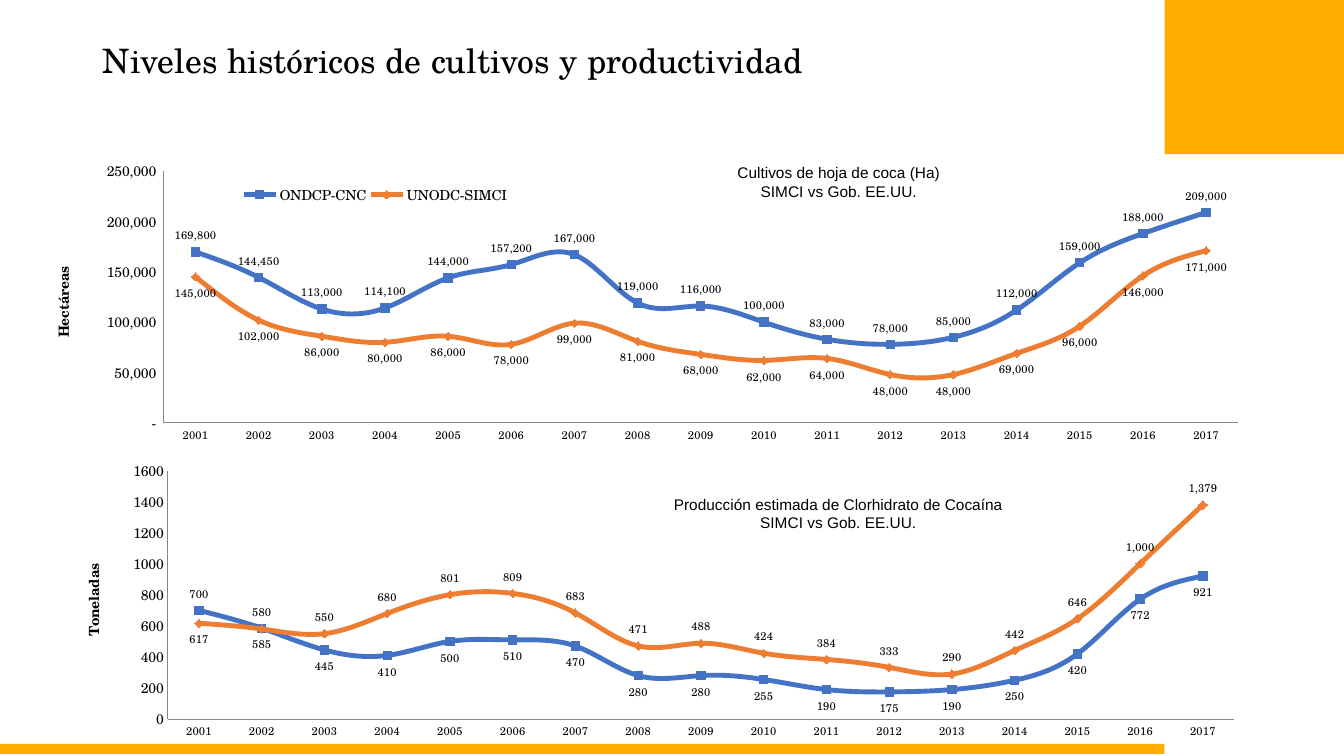
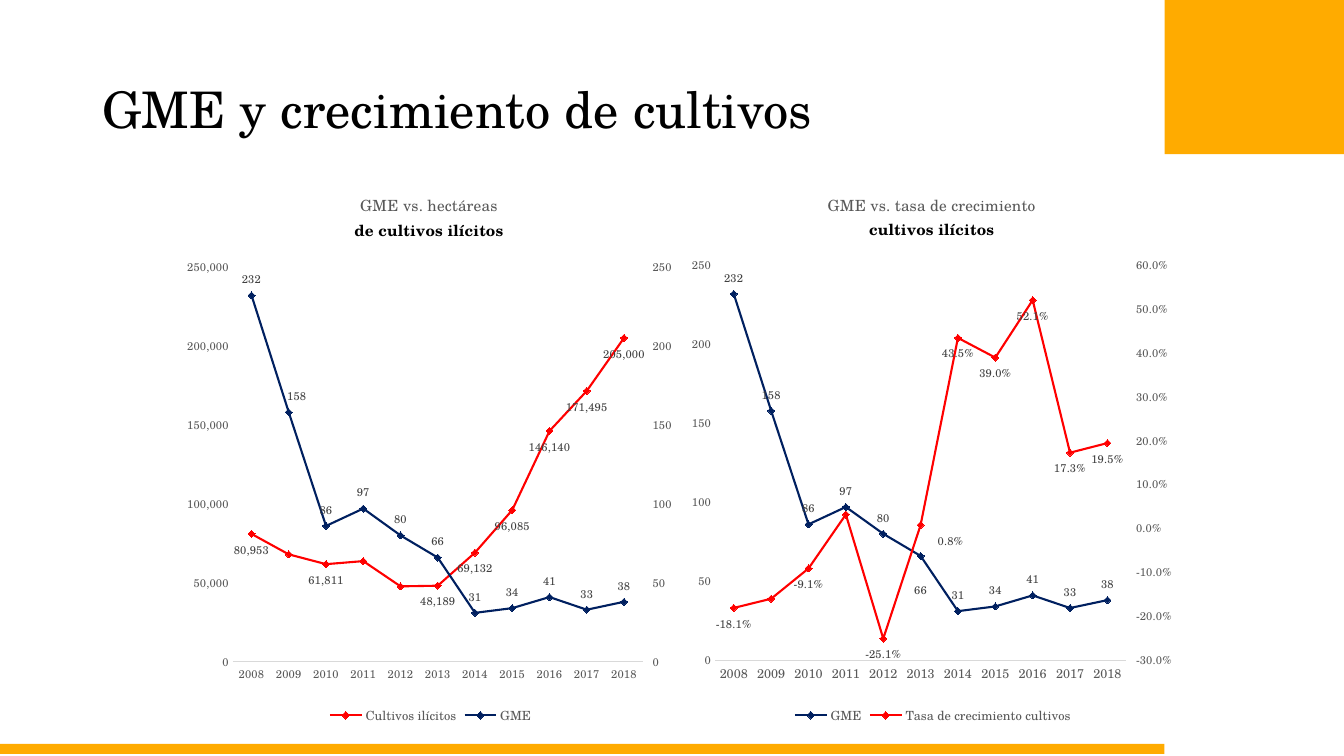
from collections import namedtuple
from copy import deepcopy

from lxml.etree import SubElement
from pptx import Presentation
from pptx.chart.data import CategoryChartData
from pptx.dml.color import RGBColor
from pptx.enum.chart import XL_CHART_TYPE, XL_LEGEND_POSITION, XL_TICK_MARK
from pptx.enum.chart import XL_LABEL_POSITION as LabelPosition
from pptx.enum.chart import XL_MARKER_STYLE as MarkerStyle
from pptx.enum.shapes import MSO_SHAPE
from pptx.enum.text import MSO_ANCHOR, PP_ALIGN
from pptx.oxml.ns import qn
from pptx.util import Inches, Pt

AMBER = RGBColor(0xFF, 0xAB, 0x00)
BLACK = RGBColor(0x00, 0x00, 0x00)
BLUE = RGBColor(0x44, 0x72, 0xC4)
ORANGE = RGBColor(0xED, 0x7D, 0x31)
NAVY = RGBColor(0x00, 0x20, 0x60)
RED = RGBColor(0xFF, 0x00, 0x00)
DARK_GRAY = RGBColor(0x40, 0x40, 0x40)
TEXT_GRAY = RGBColor(0x59, 0x59, 0x59)
AXIS_GRAY = RGBColor(0x86, 0x86, 0x86)
LIGHT_GRAY = RGBColor(0xD9, 0xD9, 0xD9)

SERIF = "TeX Gyre Schola"
SANS = "Arial"
THOUSANDS = "#,##0"
ACCOUNTING = '_(* #,##0_);_(* \\(#,##0\\);_(* "-"_);_(@_)'

ABOVE, BELOW = LabelPosition.ABOVE, LabelPosition.BELOW
OPPOSITE_SIDE = {"t": "b", "b": "t"}
Line = namedtuple("Line", "name values color position number_format marker hidden moved flipped",
                  defaults=(MarkerStyle.DIAMOND, (), {}, ()))
Scale = namedtuple("Scale", "minimum maximum step number_format")
Look = namedtuple("Look", "width marker_size smooth label_color")

BOLD_CURVES = Look(3.5, 6, True, BLACK)
THIN_LINES = Look(1.5, 5, False, DARK_GRAY)

SURVEY_YEARS = [str(year) for year in range(2001, 2018)]
GME_YEARS = [str(year) for year in range(2008, 2019)]
GME = [232, 158, 86, 97, 80, 66, 31, 34, 41, 33, 38]
CROPS = [80953, 68027, 61811, 63765, 47788, 48189, 69132, 96085, 146140, 171495, 205000]
GROWTH = [-0.181, -0.160, -0.091, 0.032, -0.251, 0.008, 0.435, 0.390, 0.521, 0.173, 0.195]


def style_font(font, size, color=BLACK, name=SERIF, bold=False):
    font.size, font.name, font.bold = Pt(size), name, bold
    font.color.rgb = color


def add_text(slide, box, lines, size, name=SERIF, align=PP_ALIGN.LEFT,
             anchor=MSO_ANCHOR.TOP, spacing=1.0):
    frame = slide.shapes.add_textbox(*map(Inches, box)).text_frame
    frame.word_wrap = True
    frame.vertical_anchor = anchor
    frame.text = "\n".join(lines)
    for paragraph in frame.paragraphs:
        paragraph.alignment = align
        paragraph.line_spacing = spacing
        style_font(paragraph.runs[0].font, size, name=name)


def add_base_slide(presentation, title, size, anchor):
    """Add a blank slide with the amber bands and its title."""
    slide = presentation.slides.add_slide(presentation.slide_layouts[6])
    for box in ((0, 7.38, 11.55, 0.1), (11.55, 0, 1.78, 1.53)):
        band = slide.shapes.add_shape(MSO_SHAPE.RECTANGLE, *map(Inches, box))
        band.shadow.inherit = False
        band.fill.solid()
        band.fill.fore_color.rgb = AMBER
        band.line.fill.background()
    add_text(slide, (0.92, 0.39, 8.22, 1.45), [title], size, anchor=anchor, spacing=0.9)
    return slide


def set_layout(parent, x, y, width=None, height=None, inner=False):
    """Give a chart part a manual layout, in fractions of the chart."""
    for old in parent.findall(qn("c:layout")):
        parent.remove(old)
    layout = SubElement(parent, qn("c:layout"))
    leading = [child for child in parent
               if child.tag in (qn("c:tx"), qn("c:legendPos"), qn("c:idx"))]
    parent.insert(len(leading), layout)
    manual = SubElement(layout, qn("c:manualLayout"))
    if inner:
        SubElement(manual, qn("c:layoutTarget")).set("val", "inner")
    if parent.tag != qn("c:dLbl"):
        for mode in ("c:xMode", "c:yMode"):
            SubElement(manual, qn(mode)).set("val", "edge")
    for tag, value in (("c:x", x), ("c:y", y), ("c:w", width), ("c:h", height)):
        if value is not None:
            SubElement(manual, qn(tag)).set("val", str(value))


def adjust_point_labels(labels, line):
    """Hide, shift or flip single point labels, without leader lines."""
    for leader in labels.findall(qn("c:showLeaderLines")):
        labels.remove(leader)
    shared = list(labels)
    SubElement(labels, qn("c:showLeaderLines")).set("val", "0")
    for position, index in enumerate(sorted([*line.hidden, *line.moved, *line.flipped])):
        label = SubElement(labels, qn("c:dLbl"))
        labels.insert(position, label)
        SubElement(label, qn("c:idx")).set("val", str(index))
        if index in line.hidden:
            SubElement(label, qn("c:delete")).set("val", "1")
            continue
        label.extend([deepcopy(child) for child in shared])
        if index in line.moved:
            set_layout(label, *line.moved[index])
        else:
            side = label.find(qn("c:dLblPos"))
            side.set("val", OPPOSITE_SIDE[side.get("val")])


def style_series(series, line, look):
    series.smooth = look.smooth
    series.format.line.color.rgb = line.color
    series.format.line.width = Pt(look.width)
    marker = series.marker
    marker.style, marker.size = line.marker, look.marker_size
    marker.format.fill.solid()
    marker.format.fill.fore_color.rgb = line.color
    marker.format.line.color.rgb = line.color
    labels = series.data_labels
    labels.show_value = True
    labels.position = line.position
    labels.number_format, labels.number_format_is_linked = line.number_format, False
    style_font(labels.font, 8, look.label_color)


def style_axis(axis, size, color, line_color):
    axis.has_major_gridlines = False
    axis.major_tick_mark = axis.minor_tick_mark = XL_TICK_MARK.NONE
    style_font(axis.tick_labels.font, size, color)
    if line_color is None:
        axis.format.line.fill.background()
    else:
        axis.format.line.color.rgb = line_color
        axis.format.line.width = Pt(0.75)


def add_line_chart(slide, box, years, lines, look, scale, plot):
    data = CategoryChartData()
    data.categories = years
    for line in lines:
        data.add_series(line.name, line.values)
    chart = slide.shapes.add_chart(
        XL_CHART_TYPE.LINE_MARKERS, *map(Inches, box), data).chart
    chart.has_title = chart.has_legend = False
    style_font(chart.font, 10)
    chart.plots[0].vary_by_categories = False
    for series, line in zip(chart.plots[0].series, lines):
        style_series(series, line, look)
    for labels, line in zip(chart.element.xpath(".//c:ser/c:dLbls"), lines):
        adjust_point_labels(labels, line)
    axis = chart.value_axis
    axis.minimum_scale, axis.maximum_scale = scale.minimum, scale.maximum
    axis.major_unit = scale.step
    axis.tick_labels.number_format = scale.number_format
    axis.tick_labels.number_format_is_linked = False
    set_layout(chart.element.xpath(".//c:plotArea")[0], *plot, inner=True)
    return chart


def add_legend(chart, position, size, color):
    chart.has_legend = True
    chart.legend.position = position
    chart.legend.include_in_layout = False
    style_font(chart.legend.font, size, color)


def move_last_series_to_right_axis(chart, scale):
    """Split the last series into its own plot with a value axis on the right."""
    plot_area = chart.element.xpath(".//c:plotArea")[0]
    left = plot_area.find(qn("c:lineChart"))
    right = deepcopy(left)
    left.remove(left.findall(qn("c:ser"))[-1])
    right.remove(right.find(qn("c:ser")))
    left.addnext(right)

    category_axis = deepcopy(plot_area.find(qn("c:catAx")))
    value_axis = deepcopy(plot_area.find(qn("c:valAx")))
    plot_area.find(qn("c:valAx")).addnext(value_axis)
    value_axis.addnext(category_axis)
    ids = ("50010", "50020")
    for reference, new_id in zip(right.findall(qn("c:axId")), ids):
        reference.set("val", new_id)
    for axis, own, other in ((category_axis, *ids), (value_axis, *reversed(ids))):
        axis.find(qn("c:axId")).set("val", own)
        axis.find(qn("c:crossAx")).set("val", other)
    category_axis.find(qn("c:delete")).set("val", "1")
    for tag, value in (("c:axPos", "r"), ("c:crosses", "max"), ("c:majorTickMark", "out"),
                       ("c:majorUnit", str(scale.step))):
        value_axis.find(qn(tag)).set("val", value)
    value_axis.find(qn("c:numFmt")).set("formatCode", scale.number_format)
    scaling = value_axis.find(qn("c:scaling"))
    scaling.find(qn("c:min")).set("val", str(scale.minimum))
    scaling.find(qn("c:max")).set("val", str(scale.maximum))


def add_history_chart(slide, box, lines, scale, plot, unit, unit_place, caption, caption_box):
    chart = add_line_chart(slide, box, SURVEY_YEARS, lines, BOLD_CURVES, scale, plot)
    style_axis(chart.category_axis, 8, BLACK, AXIS_GRAY)
    style_axis(chart.value_axis, 10, BLACK, AXIS_GRAY)
    title = chart.value_axis.axis_title
    title.text_frame.text = unit
    style_font(title.text_frame.paragraphs[0].runs[0].font, 10, bold=True)
    set_layout(title.element, *unit_place)
    add_text(slide, caption_box, [caption, "SIMCI vs Gob. EE.UU."], 11, SANS,
             PP_ALIGN.CENTER)
    return chart


def add_gme_chart(slide, box, lines, left_scale, right_scale, plot, year_size,
                  title_lines, title_x):
    chart = add_line_chart(slide, box, GME_YEARS, lines, THIN_LINES, left_scale, plot)
    style_axis(chart.category_axis, year_size, TEXT_GRAY, LIGHT_GRAY)
    style_axis(chart.value_axis, 8, TEXT_GRAY, None)
    add_legend(chart, XL_LEGEND_POSITION.BOTTOM, 9, TEXT_GRAY)
    chart.has_title = True
    frame = chart.chart_title.text_frame
    frame.text = "\n".join(title_lines)
    for paragraph, color, bold in zip(frame.paragraphs, (TEXT_GRAY, BLACK), (False, True)):
        paragraph.line_spacing = 1.3
        style_font(paragraph.runs[0].font, 11, color, bold=bold)
    set_layout(chart.chart_title.element, title_x, 0.03)
    move_last_series_to_right_axis(chart, right_scale)


def build_history_slide(presentation):
    slide = add_base_slide(presentation, "Niveles históricos de cultivos y productividad",
                           24, MSO_ANCHOR.TOP)
    us_crops = [169800, 144450, 113000, 114100, 144000, 157200, 167000, 119000, 116000,
                100000, 83000, 78000, 85000, 112000, 159000, 188000, 209000]
    un_crops = [145000, 102000, 86000, 80000, 86000, 78000, 99000, 81000, 68000,
                62000, 64000, 48000, 48000, 69000, 96000, 146000, 171000]
    us_output = [700, 585, 445, 410, 500, 510, 470, 280, 280,
                 255, 190, 175, 190, 250, 420, 772, 921]
    un_output = [617, 580, 550, 680, 801, 809, 683, 471, 488,
                 424, 384, 333, 290, 442, 646, 1000, 1379]

    def survey_lines(us_values, un_values, us_position, un_position, flipped=()):
        return [Line("ONDCP-CNC", us_values, BLUE, us_position, THOUSANDS,
                     MarkerStyle.SQUARE, flipped=flipped),
                Line("UNODC-SIMCI", un_values, ORANGE, un_position, THOUSANDS,
                     flipped=flipped)]

    crops = add_history_chart(
        slide, (0.08, 1.6, 12.27, 2.8), survey_lines(us_crops, un_crops, ABOVE, BELOW),
        Scale(0, 250000, 50000, ACCOUNTING), (0.126, 0.03, 0.868, 0.902),
        "Hectáreas", (0.033, 0.365), "Cultivos de hoja de coca (Ha)",
        (7.21, 1.57, 2.22, 0.47))
    add_legend(crops, XL_LEGEND_POSITION.RIGHT, 10, BLACK)
    set_layout(crops.element.xpath(".//c:legend")[0], 0.187, 0.07, 0.22, 0.09)
    add_history_chart(
        slide, (0.39, 4.57, 12.36, 2.77),
        survey_lines(us_output, un_output, BELOW, ABOVE, flipped=(0,)),
        Scale(0, 1600, 200, "General"), (0.103, 0.033, 0.856, 0.894),
        "Toneladas", (0.032, 0.36), "Producción estimada de Clorhidrato de Cocaína",
        (6.57, 4.86, 3.49, 0.47))


def build_gme_slide(presentation):
    slide = add_base_slide(presentation, "GME y crecimiento de cultivos",
                           36, MSO_ANCHOR.MIDDLE)
    gme_scale = Scale(0, 250, 50, THOUSANDS)
    gme = Line("GME", GME, NAVY, ABOVE, "0")
    crops = Line("Cultivos ilícitos", CROPS, RED, BELOW, THOUSANDS, hidden=(1, 3, 4))
    growth = Line("Tasa de crecimiento cultivos", GROWTH, RED, BELOW, "0.0%",
                  hidden=(1, 3), moved={5: (0.06, 0)})
    add_gme_chart(
        slide, (1.77, 1.71, 5, 5.52), [crops, gme._replace(moved={1: (0.016, 0)})],
        Scale(0, 250000, 50000, THOUSANDS), gme_scale, (0.108, 0.17, 0.813, 0.71),
        8, ["GME vs. hectáreas", "de cultivos ilícitos"], 0.343)
    add_gme_chart(
        slide, (6.77, 1.7, 4.96, 5.53), [gme._replace(moved={5: (0, 0.09)}), growth],
        gme_scale, Scale(-0.3, 0.6, 0.1, "0.0%"), (0.065, 0.169, 0.822, 0.708),
        9, ["GME vs. tasa de crecimiento", "cultivos ilícitos"], 0.284)


def main():
    presentation = Presentation()
    presentation.slide_width, presentation.slide_height = Inches(13.33), Inches(7.5)
    build_history_slide(presentation)
    build_gme_slide(presentation)
    presentation.save("out.pptx")


if __name__ == "__main__":
    main()
